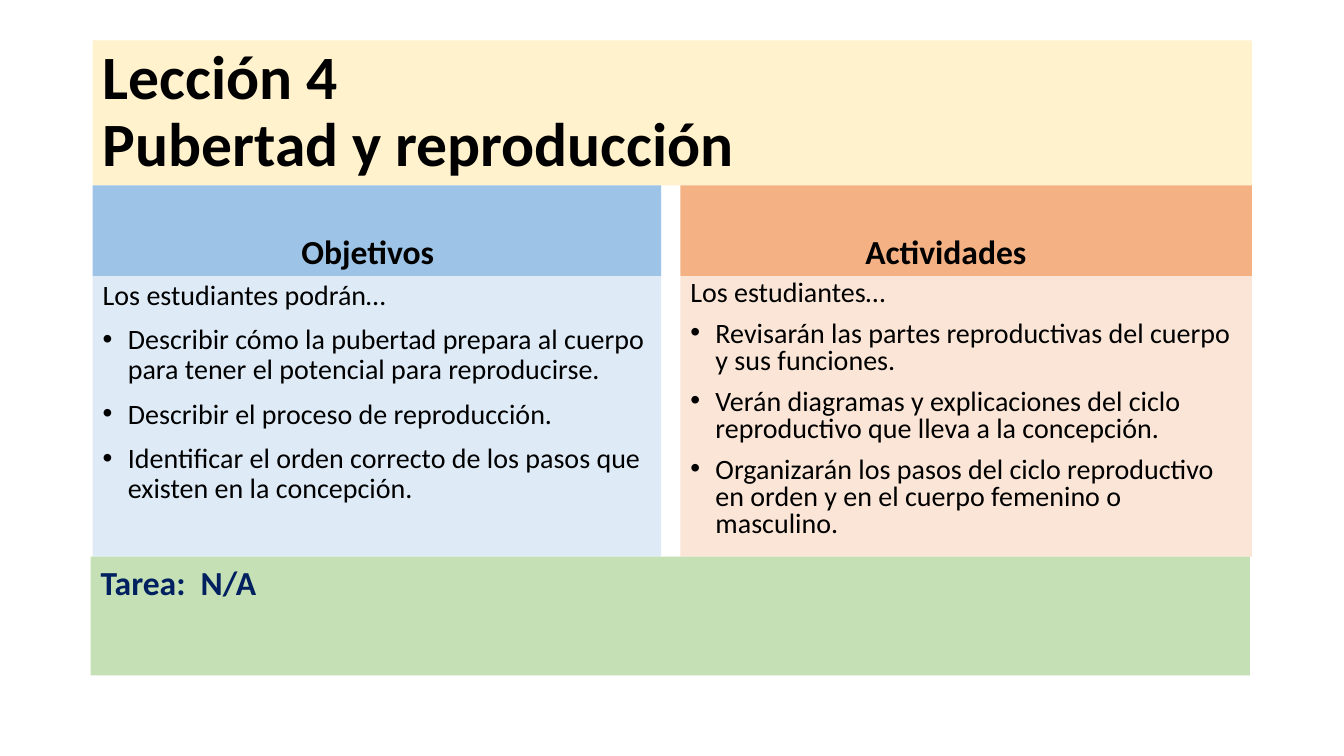
import pptx
import pptx.util
import pptx.dml.color
import pptx.enum.shapes
import pptx.enum.text
import dataclasses
import lxml.etree

Pt = pptx.util.Pt
RGB = pptx.dml.color.RGBColor.from_string
Align = pptx.enum.text.PP_ALIGN
Anchor = pptx.enum.text.MSO_ANCHOR


@dataclasses.dataclass(frozen=True)
class Theme:
    font: str = "Calibri"
    black: str = "000000"
    navy: str = "002060"
    cream: str = "FFF2CC"
    blue: str = "9DC3E6"
    sky: str = "DEEBF7"
    orange: str = "F4B183"
    peach: str = "FBE5D6"
    green: str = "C5E0B4"
    title: int = 44
    head: int = 24
    body: int = 20


THEME = Theme()
LEFT, WIDTH = 66.24, 828
TOP, HEAD, BODY, TASK = 28.8, 132.5, 197.3, 397.6
INDENT = 18

COLUMNS = [
    dict(left=LEFT, width=406, spacing=0.9, dark=THEME.blue, light=THEME.sky,
         head="Objetivos\t", intro="Los estudiantes podrán…", items=[
             "Describir cómo la pubertad prepara al cuerpo para tener el potencial para reproducirse.",
             "Describir el proceso de reproducción.",
             "Identificar el orden correcto de los pasos que existen en la concepción."]),
    dict(left=486, width=408.24, spacing=0.8, dark=THEME.orange, light=THEME.peach,
         head="Actividades\t", intro="Los estudiantes…", items=[
             "Revisarán las partes reproductivas del cuerpo y sus funciones.",
             "Verán diagramas y explicaciones del ciclo reproductivo que lleva a la concepción.",
             "Organizarán los pasos del ciclo reproductivo en orden y en el cuerpo femenino o masculino."]),
]


def apply(target, values):
    for name, value in values.items():
        setattr(target, name, value)


def panel(slide, box, fill, anchor):
    shape = slide.shapes.add_shape(
        pptx.enum.shapes.MSO_SHAPE.RECTANGLE, *map(Pt, box))
    shape.shadow.inherit = False
    shape.fill.solid()
    shape.fill.fore_color.rgb = RGB(fill)
    shape.line.fill.background()
    apply(shape.text_frame, dict(word_wrap=True, vertical_anchor=anchor))
    return shape.text_frame


def write(para, text, size, bold=False, color=THEME.black, **layout):
    para.text = text
    apply(para, dict(alignment=Align.LEFT, space_before=Pt(0)) | layout)
    apply(para.font, dict(name=THEME.font, size=Pt(size), bold=bold))
    para.font.color.rgb = RGB(color)
    for run in para.runs:
        apply(run.font, dict(name=THEME.font, size=Pt(size), bold=bold))
        run.font.color.rgb = RGB(color)


def bullet(para):
    props = para._p.get_or_add_pPr()
    props.set("marL", str(Pt(INDENT)))
    props.set("indent", str(-Pt(INDENT)))
    space = pptx.oxml.ns.qn
    lxml.etree.SubElement(props, space("a:buFont")).set("typeface", "Arial")
    lxml.etree.SubElement(props, space("a:buChar")).set("char", "•")


def column(slide, left, width, spacing, dark, light, head, intro, items):
    frame = panel(slide, (left, HEAD, width, BODY - HEAD), dark, Anchor.BOTTOM)
    write(frame.paragraphs[0], head, THEME.head, True, alignment=Align.CENTER)
    frame = panel(slide, (left, BODY, width, TASK - BODY), light, Anchor.TOP)
    write(frame.paragraphs[0], intro, THEME.body, line_spacing=spacing)
    for item in items:
        para = frame.add_paragraph()
        write(para, item, THEME.body, line_spacing=spacing, space_before=Pt(10))
        bullet(para)


def main():
    deck = pptx.Presentation()
    apply(deck, dict(slide_width=Pt(960), slide_height=Pt(540)))
    slide = deck.slides.add_slide(deck.slide_layouts[6])
    title = panel(slide, (LEFT, TOP, WIDTH, HEAD - TOP), THEME.cream, Anchor.MIDDLE)
    write(title.paragraphs[0], "Lección 4\vPubertad y reproducción",
          THEME.title, True, line_spacing=0.9)
    for data in COLUMNS:
        column(slide, **data)
    task = panel(slide, (64.8, TASK, WIDTH, 84.8), THEME.green, Anchor.TOP)
    write(task.paragraphs[0], "Tarea:  N/A", THEME.head, True, THEME.navy)
    deck.save("out.pptx")


if __name__ == "__main__":
    main()
